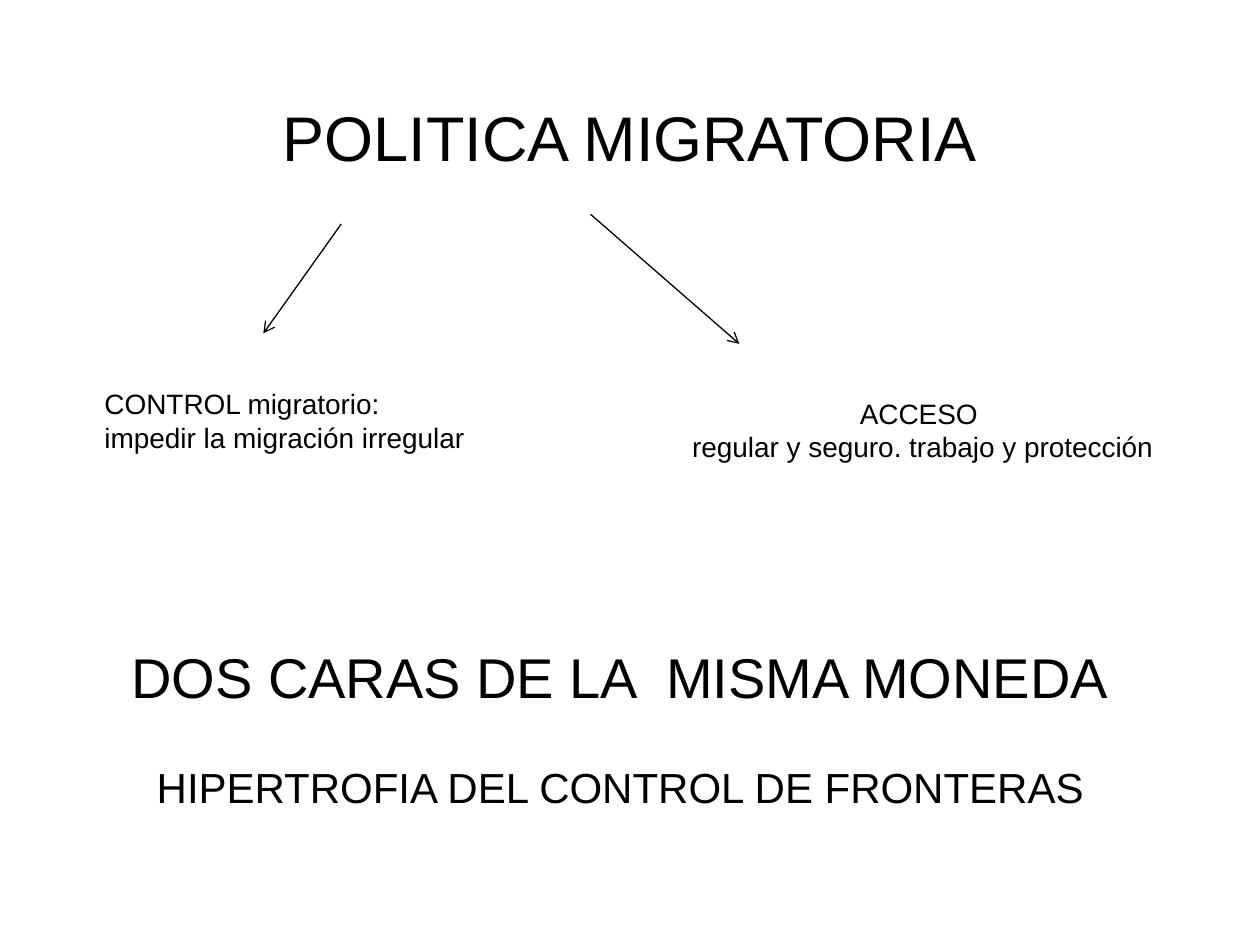
import pptx
import pptx.util
import pptx.dml.color
import pptx.enum.shapes
import pptx.enum.text
import pptx.oxml.ns
import lxml.etree

Pt = pptx.util.Pt
ALIGN = pptx.enum.text.PP_ALIGN
ANCHOR = pptx.enum.text.MSO_ANCHOR
COLORS = {"ink": "000000", "paper": "FFFFFF"}


def rgb(name):
    return pptx.dml.color.RGBColor.from_string(COLORS[name])


def sub(parent, tag, **attrs):
    return lxml.etree.SubElement(parent, pptx.oxml.ns.qn(tag), **attrs)


def place(sp, box):
    sp.left, sp.top, sp.width, sp.height = (Pt(v) for v in box)


def write(sp, lines, sizes, align=ALIGN.LEFT, anchor=ANCHOR.TOP,
          top=7.2, bottom=7.2, indent=0, gap=0):
    tf = sp.text_frame
    tf.word_wrap = True
    tf.auto_size = pptx.enum.text.MSO_AUTO_SIZE.NONE
    tf.vertical_anchor = anchor
    tf.margin_left = tf.margin_right = Pt(7.2)
    tf.margin_top, tf.margin_bottom = Pt(top), Pt(bottom)
    for i, (line, size) in enumerate(zip(lines, sizes)):
        p = tf.add_paragraph() if i else tf.paragraphs[0]
        p.alignment = align
        p.space_before = Pt(gap if i else 0)
        pPr = p._p.get_or_add_pPr()
        pPr.set("marL", str(Pt(indent)))
        pPr.set("indent", "0")
        sub(pPr, "a:buNone")
        r = p.add_run()
        r.text = line
        r.font.name = "Arial"
        r.font.size = Pt(size)
        r.font.color.rgb = rgb("ink")


def add_title(s, box):
    sp = s.shapes.title
    place(sp, box)
    write(sp, ["POLITICA MIGRATORIA"], [36], align=ALIGN.CENTER,
          anchor=ANCHOR.MIDDLE, top=29.6)


def add_branch(s, idx, box, lines, top, align):
    sp = s.placeholders[idx]
    place(sp, box)
    write(sp, lines, [16, 16], align=align, top=top, indent=16.5)


def add_arrow(s, start, end):
    kind = pptx.enum.shapes.MSO_CONNECTOR.STRAIGHT
    line = s.shapes.add_connector(kind, *(Pt(v) for v in start + end))
    line.line.color.rgb = rgb("ink")
    line.line.width = Pt(0.75)
    sub(line.line._get_or_add_ln(), "a:tailEnd", type="arrow")
    sub(line._element.spPr, "a:effectLst")


def add_conclusion(s, box):
    sp = s.shapes.add_textbox(*(Pt(v) for v in box))
    write(sp, ["DOS CARAS DE LA  MISMA MONEDA",
               "HIPERTROFIA DEL CONTROL DE FRONTERAS"], [32, 24],
          align=ALIGN.CENTER, top=6, bottom=3.6, gap=30)


def main():
    prs = pptx.Presentation()
    prs.slide_width, prs.slide_height = Pt(720), Pt(540)
    s = prs.slides.add_slide(prs.slide_layouts[3])
    s.background.fill.solid()
    s.background.fill.fore_color.rgb = rgb("paper")

    add_title(s, (36, 21.6, 648, 90))
    add_branch(s, 1, (36, 128, 318, 244),
               ["CONTROL migratorio:", "impedir la migración irregular"],
               top=93, align=ALIGN.LEFT)
    add_branch(s, 2, (360, 151, 318, 164),
               ["ACCESO ", "regular y seguro. trabajo y protección"],
               top=75.5, align=ALIGN.CENTER)
    add_arrow(s, (195, 128), (150.5, 190.5))
    add_arrow(s, (337.5, 122.5), (422.5, 196.5))
    add_conclusion(s, (59.5, 361, 590, 104))
    prs.save("out.pptx")


if __name__ == "__main__":
    main()
